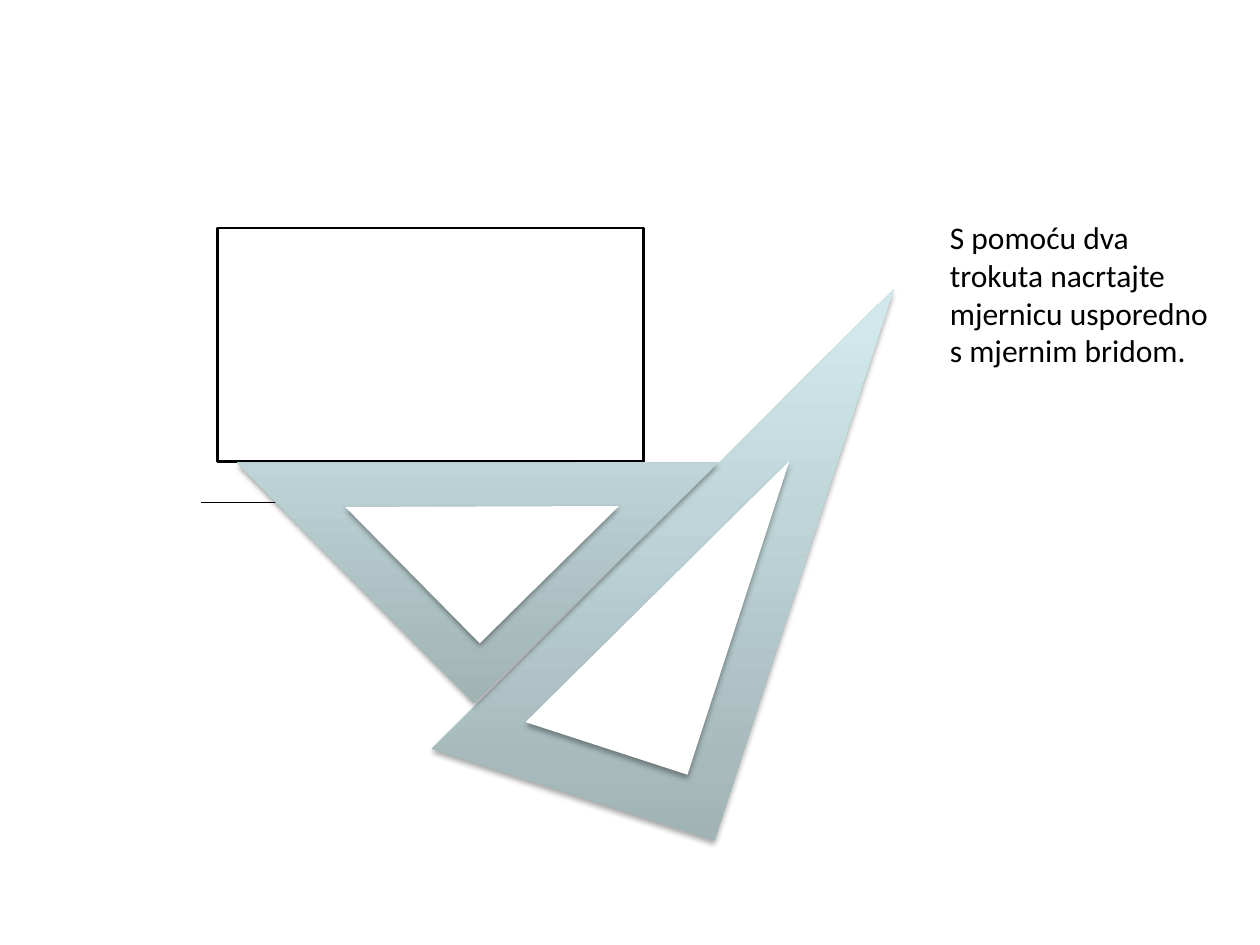
from lxml import etree
from pptx import Presentation
from pptx.dml.color import RGBColor as Rgb
from pptx.enum.shapes import MSO_CONNECTOR as Conn, MSO_SHAPE as Kind
from pptx.enum.text import MSO_AUTO_SIZE as Fit
from pptx.oxml import parse_xml
from pptx.oxml.ns import nsdecls, qn
from pptx.util import Cm, Pt

# Content: lengths in cm as left, top, width, height
TEXT = "S pomoću dva trokuta nacrtajte mjernicu usporedno s mjernim bridom."
NOTE = (18.9, 4.27, 5.99, 3.33)
BODY = (4.39, 4.6, 8.59, 4.7)
GAUGE = (4.06, 10.13, 13.31, 10.13)  # from x, y to x, y
SQUARES = [  # rotation, outer edge, inner cutout
    (288, (7.52, 7.47, 11.68, 5.99), (9.93, 10.21, 6.65, 3.43)),
    (315.4, (6.17, 5.92, 6.91, 6.81), (7.75, 8.28, 3.94, 3.86)),
]

THEME = {
    "font": "Calibri",
    "size": Pt(18),
    "ink": Rgb.from_string("000000"),
    "paper": Rgb.from_string("FFFFFF"),
    "thick": Pt(1.5),
    "thin": Pt(0.75),
    "glass": [(0, "A0B3B5"), (80, "D0E8EB"), (100, "D1EAEC")],
}


def cms(box):
    return [Cm(v) for v in box]


def shade(shape):
    """Soft shadow straight below the shape."""
    shape.shadow.inherit = False
    list_ = shape._element.spPr.find(qn("a:effectLst"))
    list_.append(parse_xml(
        f'<a:outerShdw {nsdecls("a")} blurRad="40000" dist="23000" '
        'dir="5400000" rotWithShape="0"><a:srgbClr val="000000">'
        '<a:alpha val="35000"/></a:srgbClr></a:outerShdw>'))


def glaze(shape):
    """Upright gradient, dark at the bottom of the page."""
    stops = "".join(
        f'<a:gs pos="{pos * 1000}"><a:srgbClr val="{hue}"/></a:gs>'
        for pos, hue in THEME["glass"])
    shape._element.spPr.find(qn("a:prstGeom")).addnext(parse_xml(
        f'<a:gradFill {nsdecls("a")} rotWithShape="0"><a:gsLst>{stops}'
        '</a:gsLst><a:lin ang="16200000" scaled="0"/></a:gradFill>'))


def wedge(group, box, turn):
    shape = group.shapes.add_shape(Kind.RIGHT_TRIANGLE, *cms(box))
    shape.rotation = turn
    shape.line.fill.background()
    shade(shape)
    return shape


def main():
    deck = Presentation()
    deck.slide_width, deck.slide_height = Cm(25.4), Cm(19.05)
    slide = deck.slides.add_slide(deck.slide_layouts[6])
    shapes = slide.shapes

    # Workpiece
    part = shapes.add_shape(Kind.RECTANGLE, *cms(BODY))
    part.shadow.inherit = False
    part.fill.background()
    part.line.color.rgb = THEME["ink"]
    part.line.width = THEME["thick"]

    # Guide line
    line = shapes.add_connector(Conn.STRAIGHT, *cms(GAUGE))
    line.line.color.rgb = THEME["ink"]
    line.line.width = THEME["thin"]
    etree.SubElement(line._element.spPr, qn("a:effectLst"))

    # Set squares; the second lies in front of the first
    for turn, edge, hole in reversed(SQUARES[::-1]):
        group = shapes.add_group_shape()
        glaze(wedge(group, edge, turn))
        fill = wedge(group, hole, turn).fill
        fill.solid()
        fill.fore_color.rgb = THEME["paper"]

    # Instruction
    frame = shapes.add_textbox(*cms(NOTE)).text_frame
    frame.word_wrap = True
    frame.auto_size = Fit.SHAPE_TO_FIT_TEXT
    para = frame.paragraphs[0]
    para.text = TEXT
    para.font.name = THEME["font"]
    para.font.size = THEME["size"]
    para.font.color.rgb = THEME["ink"]

    deck.save("out.pptx")


if __name__ == "__main__":
    main()
